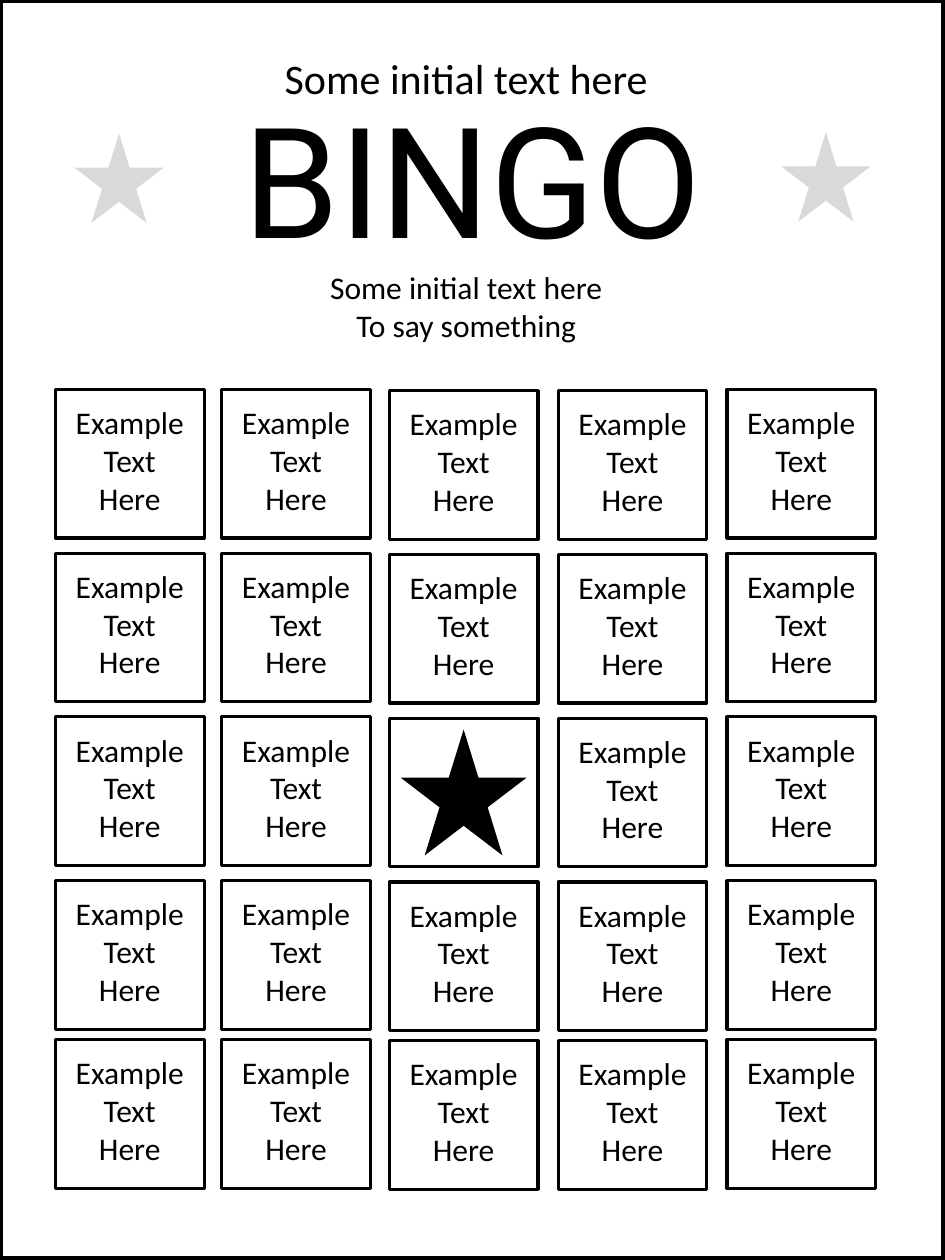
from pptx import Presentation
from pptx.dml.color import RGBColor
from pptx.enum.shapes import MSO_SHAPE
from pptx.enum.text import MSO_AUTO_SIZE, PP_ALIGN
from pptx.util import Inches, Pt

RECT = MSO_SHAPE.RECTANGLE
STAR = MSO_SHAPE.STAR_5_POINT
CENTER = PP_ALIGN.CENTER
GROW = MSO_AUTO_SIZE.SHAPE_TO_FIT_TEXT
COLORS = {"ink": "000000", "pale": "D9D9D9"}

deck = Presentation()
deck.slide_width = Inches(7.5)
deck.slide_height = Inches(10)
slide = deck.slides.add_slide(deck.slide_layouts[6])


def add_text(lines, left, top, width, height, size, font="Calibri"):
    box = slide.shapes.add_textbox(
        Inches(left), Inches(top), Inches(width), Inches(height))
    frame = box.text_frame
    frame.word_wrap = True
    frame.auto_size = GROW
    frame.text = "\n".join(lines)
    for para in frame.paragraphs:
        para.alignment = CENTER
        para.font.size = Pt(size)
        para.font.name = font
        para.font.color.rgb = RGBColor.from_string(COLORS["ink"])


def add_shape(kind, left, top, width, height, fill=None, line=None):
    """Add a shape with a fill colour or an ink outline of line points."""
    shape = slide.shapes.add_shape(
        kind, Inches(left), Inches(top), Inches(width), Inches(height))
    shape.shadow.inherit = False
    if fill:
        shape.fill.solid()
        shape.fill.fore_color.rgb = RGBColor.from_string(COLORS[fill])
    else:
        shape.fill.background()
    if line:
        shape.line.width = Pt(line)
        shape.line.color.rgb = RGBColor.from_string(COLORS["ink"])
    else:
        shape.line.fill.background()


# Page frame and heading
add_shape(RECT, 0, 0, 7.5, 10, line=4)
add_text(["Some initial text here"], 0.44, 0.37, 6.52, 0.5, 24)
add_text(["BINGO"], 0, 0.62, 7.5, 1.58, 88, "Roboto")
add_text(["Some initial text here", "To say something"],
         0.44, 2.08, 6.52, 0.79, 18)
for left, top in [(0.59, 1.06), (6.2, 1.05)]:
    add_shape(STAR, left, top, 0.71, 0.71, fill="pale")

# Bingo card: each column has its own small drop
cols = [(0.44, 0), (1.76, 0), (3.09, 0.01), (4.43, 0.01), (5.77, 0)]
rows = [3.09, 4.39, 5.69, 6.99, 8.25]
side, inset = 1.18, 0.06
for r, top in enumerate(rows):
    for c, (left, drop) in enumerate(cols):
        y = top + drop
        add_shape(RECT, left, y, side, side, line=1.75)
        if r == c == 2:
            add_shape(STAR, left + 0.09, y + 0.09, 1, 1, fill="ink")
        else:
            add_text(["Example", "Text", "Here"], left + inset, y + inset,
                     side - 2 * inset, side - 2 * inset, 18)

deck.save("out.pptx")
